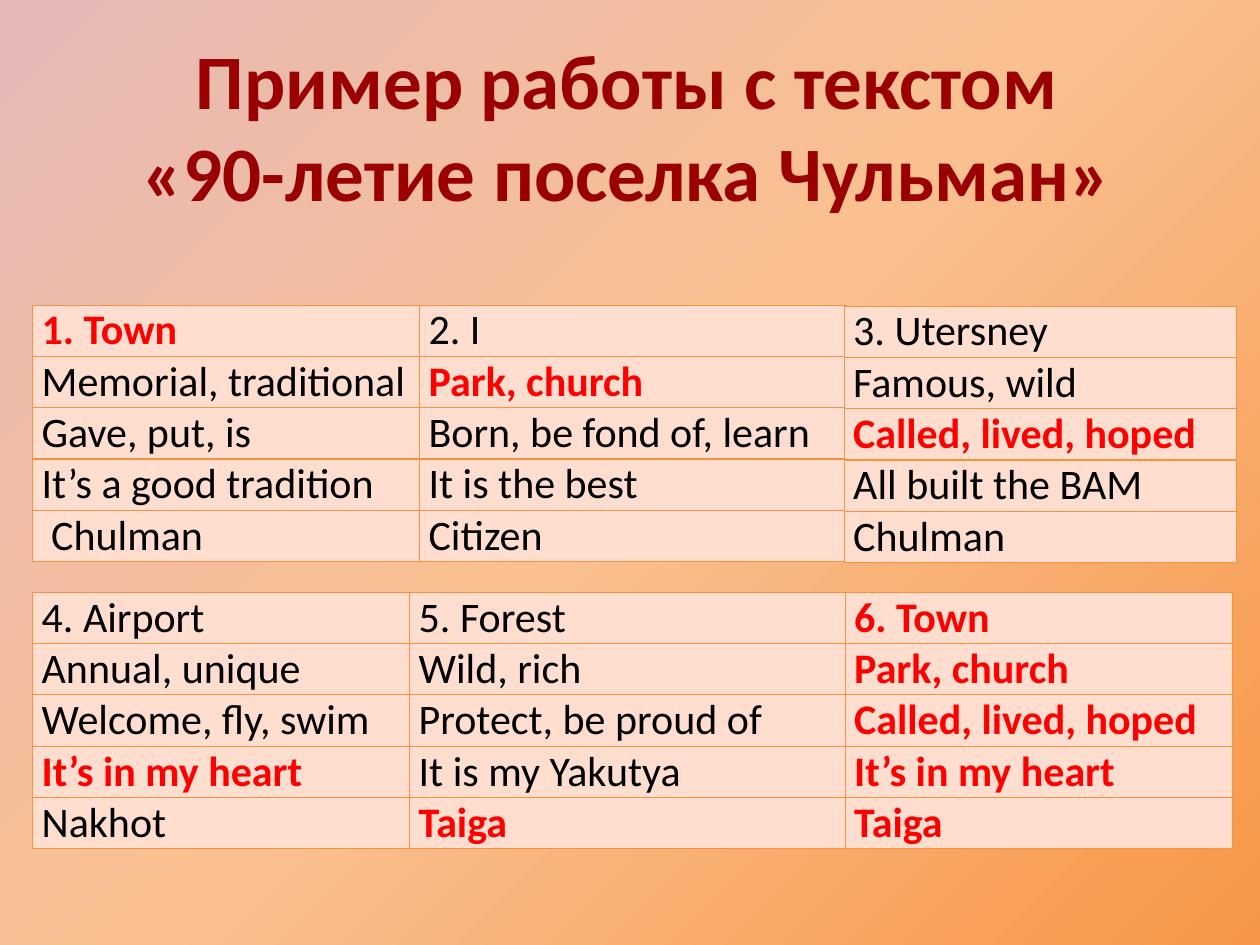
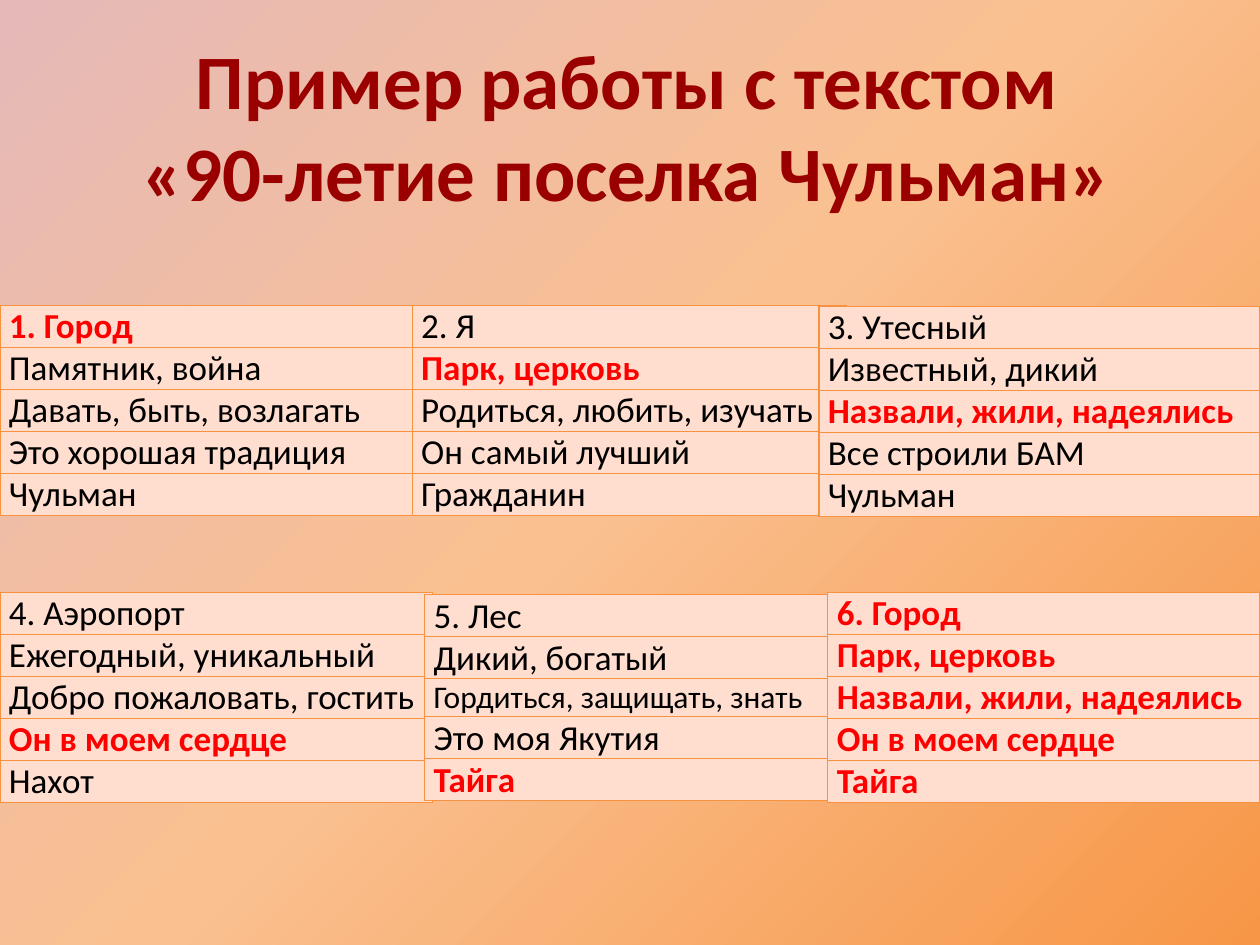
from dataclasses import dataclass

from pptx import Presentation
from pptx.dml.color import RGBColor
from pptx.enum.text import MSO_AUTO_SIZE, PP_ALIGN
from pptx.oxml import parse_xml
from pptx.oxml.ns import nsdecls
from pptx.util import Cm, Pt

CENTER = PP_ALIGN.CENTER
GROW = MSO_AUTO_SIZE.SHAPE_TO_FIT_TEXT


@dataclass(frozen=True)
class Theme:
    font: str = "Calibri"
    title: str = "9A0000"
    text: str = "000000"
    match: str = "FF0000"
    cell: str = "FFDED0"
    edge: str = "F69240"
    back: tuple = ((0, "F79646"), (50, "FAC090"), (100, "E6B9B8"))
    title_size: int = 44
    small_size: int = 18
    edge_width: float = 0.75


THEME = Theme()
TITLE = ("Пример работы с текстом", "«90-летие поселка Чульман»")
TITLE_BOX = (0.58, 0.53, 24.13, 4.01)
PAD = 0.18

# Each card has five lines; the last card gathers the right answers.
# Places are left, top and width in cm.
DECK = [
    {
        "size": 24,
        "small": (),
        "cards": [
            ("Town", "Memorial, traditional", "Gave, put, is",
             "It’s a good tradition", " Chulman"),
            ("I", "Park, church", "Born, be fond of, learn",
             "It is the best", "Citizen"),
            ("Utersney", "Famous, wild", "Called, lived, hoped",
             "All built the BAM", "Chulman"),
            ("Airport", "Annual, unique", "Welcome, fly, swim",
             "It’s in my heart", "Nakhot"),
            ("Forest", "Wild, rich", "Protect, be proud of",
             "It is my Yakutya", "Taiga"),
            ("Town", "Park, church", "Called, lived, hoped",
             "It’s in my heart", "Taiga"),
        ],
        "places": [
            (0.66, 6.15, 7.8), (8.46, 6.15, 8.61), (17.02, 6.17, 7.9),
            (0.66, 11.94, 7.59), (8.26, 11.94, 8.79), (17.04, 11.94, 7.8),
        ],
    },
    {
        "size": 20,
        "small": ("Гордиться, защищать, знать",),
        "cards": [
            ("Город", "Памятник, война", "Давать, быть, возлагать",
             "Это хорошая традиция", "Чульман"),
            ("Я", "Парк, церковь", "Родиться, любить, изучать",
             "Он самый лучший", "Гражданин"),
            ("Утесный", "Известный, дикий", "Назвали, жили, надеялись",
             "Все строили БАМ", "Чульман"),
            ("Аэропорт", "Ежегодный, уникальный", "Добро пожаловать, гостить",
             "Он в моем сердце", "Нахот"),
            ("Лес", "Дикий, богатый", "Гордиться, защищать, знать",
             "Это моя Якутия", "Тайга"),
            ("Город", "Парк, церковь", "Назвали, жили, надеялись",
             "Он в моем сердце", "Тайга"),
        ],
        "places": [
            (0, 6.15, 8.46), (8.31, 6.15, 8.76), (16.51, 6.17, 8.89),
            (0, 11.94, 8.71), (8.56, 11.99, 8.99), (16.69, 11.94, 8.71),
        ],
    },
]


def set_font(para, size, color, bold):
    font = para.font
    font.name, font.size, font.bold = THEME.font, Pt(size), bold
    font.color.rgb = RGBColor.from_string(color)


def paint_back(slide):
    """Fill the slide with a gradient that starts at the lower right corner."""
    stops = "".join(
        f'<a:gs pos="{pos * 1000}"><a:srgbClr val="{color}"/></a:gs>'
        for pos, color in THEME.back)
    slide.element.cSld.insert(0, parse_xml(
        f'<p:bg {nsdecls("p", "a")}><p:bgPr><a:gradFill rotWithShape="1">'
        f'<a:gsLst>{stops}</a:gsLst><a:path path="circle">'
        '<a:fillToRect l="100000" t="100000"/></a:path>'
        '<a:tileRect r="-100000" b="-100000"/></a:gradFill>'
        '<a:effectLst/></p:bgPr></p:bg>'))


def add_title(slide):
    frame = slide.shapes.add_textbox(*map(Cm, TITLE_BOX)).text_frame
    frame.word_wrap = True
    frame.auto_size = GROW
    frame.text = "\n".join(TITLE)
    for para in frame.paragraphs:
        para.alignment = CENTER
        set_font(para, THEME.title_size, THEME.title, True)


def style_cell(cell):
    cell.margin_left = cell.margin_right = Cm(PAD)
    cell.margin_top = cell.margin_bottom = 0
    cell.fill.solid()
    cell.fill.fore_color.rgb = RGBColor.from_string(THEME.cell)
    props = cell._tc.get_or_add_tcPr()
    for spot, side in enumerate("LRTB"):
        props.insert(spot, parse_xml(
            f'<a:ln{side} {nsdecls("a")} w="{Pt(THEME.edge_width)}">'
            f'<a:solidFill><a:srgbClr val="{THEME.edge}"/></a:solidFill>'
            f'</a:ln{side}>'))


def add_card(slide, num, lines, answer, place, base, small):
    """Add one table of lines; lines that match the answer stand out."""
    left, top, width = place
    sizes = [THEME.small_size if line in small else base for line in lines]
    highs = [Cm(size * 2.54 / 60) for size in sizes]
    table = slide.shapes.add_table(
        len(lines), 1, Cm(left), Cm(top), Cm(width), sum(highs)).table
    table.first_row = table.horz_banding = False
    for row, line in enumerate(lines):
        table.rows[row].height = highs[row]
        cell = table.cell(row, 0)
        style_cell(cell)
        cell.text = f"{num}. {line}" if row == 0 else line
        match = line == answer[row]
        set_font(cell.text_frame.paragraphs[0], sizes[row],
                 THEME.match if match else THEME.text, match)


def main():
    prs = Presentation()
    prs.slide_width, prs.slide_height = Cm(25.4), Cm(19.05)
    for page in DECK:
        slide = prs.slides.add_slide(prs.slide_layouts[6])
        paint_back(slide)
        cards = page["cards"]
        for num, (lines, place) in enumerate(zip(cards, page["places"]), 1):
            add_card(slide, num, lines, cards[-1], place,
                     page["size"], page["small"])
        add_title(slide)
    prs.save("out.pptx")


if __name__ == "__main__":
    main()
